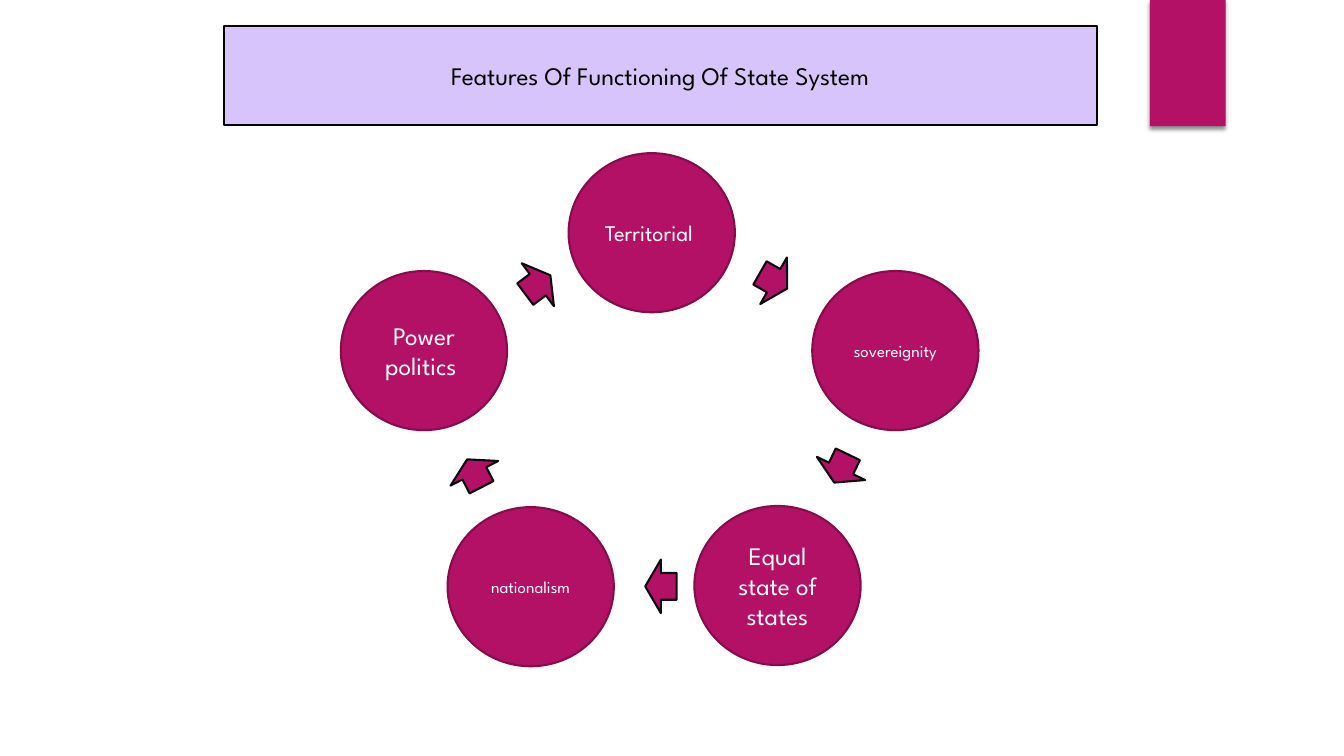
from pptx import Presentation
from pptx.dml.color import RGBColor
from pptx.enum.shapes import MSO_SHAPE as Shape
from pptx.enum.text import MSO_ANCHOR as Anchor, MSO_AUTO_SIZE as AutoSize, PP_ALIGN as Align
from pptx.oxml import parse_xml
from pptx.oxml.ns import nsdecls
from pptx.util import Cm, Pt

MAGENTA = RGBColor(0xB3, 0x11, 0x66)
DARK_MAGENTA = RGBColor(0x84, 0x0D, 0x4B)
LILAC = RGBColor(0xD7, 0xC4, 0xFA)
BLACK = RGBColor(0, 0, 0)
NEAR_BLACK = RGBColor(0x0D, 0x0D, 0x0D)
WHITE = RGBColor(0xFF, 0xFF, 0xFF)

CIRCLE_SIZE = (4.19, 4.01)
ARROW_SIZE = (0.79, 1.35)

# Clockwise from the top: wording, font size, left, top
FEATURES = [
    ("Territorial ", 16, 14.33, 3.86),
    ("sovereignity", 12, 20.47, 6.83),
    ("Equal state of states", 18, 17.5, 12.75),
    ("nationalism", 12, 11.28, 12.78),
    ("Power politics ", 18, 8.59, 6.83),
]
# Arrow following each feature: left, top, rotation
ARROWS = [
    (19.1, 6.4, 29.8),
    (20.8, 11.13, 115.6),
    (16.26, 14.1, 180),
    (11.56, 11.25, 242.7),
    (13.16, 6.5, 323.1),
]


class CycleSlide:
    """Holds the slide and the style shared by its elements."""

    font = "League Spartan"
    line_width = Pt(1.5)

    def __init__(self, deck):
        self.slide = deck.slides.add_slide(deck.slide_layouts[5])

    def paint(self, shape, fill, line=None):
        shape.fill.solid()
        shape.fill.fore_color.rgb = fill
        if line is None:
            shape.line.fill.background()
        else:
            shape.line.color.rgb = line
            shape.line.width = self.line_width

    def label(self, shape, text, size, color):
        frame = shape.text_frame
        frame.word_wrap = True
        frame.auto_size = AutoSize.NONE
        frame.vertical_anchor = Anchor.MIDDLE
        paragraph = frame.paragraphs[0]
        paragraph.alignment = Align.CENTER
        run = paragraph.add_run()
        run.text = text
        run.font.name = self.font
        run.font.size = Pt(size)
        run.font.color.rgb = color

    def add(self, kind, left, top, width, height, fill, line=None):
        shape = self.slide.shapes.add_shape(kind, Cm(left), Cm(top), Cm(width), Cm(height))
        shape.shadow.inherit = False
        self.paint(shape, fill, line)
        return shape

    def title(self, text, left, top, width, height):
        title = self.slide.shapes.title
        title.left, title.top = Cm(left), Cm(top)
        title.width, title.height = Cm(width), Cm(height)
        self.paint(title, LILAC, BLACK)
        self.label(title, text, 18, BLACK)

    def ribbon(self, left, top, width, height):
        ribbon = self.add(Shape.RECTANGLE, left, top, width, height, MAGENTA)
        effects = ribbon._element.spPr.find("{*}effectLst")
        effects.append(parse_xml(
            f'<a:outerShdw {nsdecls("a")} blurRad="{Pt(3)}" dist="{Pt(2)}" dir="5400000" '
            'rotWithShape="0"><a:srgbClr val="000000"><a:alpha val="45000"/></a:srgbClr>'
            '</a:outerShdw>'))

    def feature(self, text, size, left, top):
        circle = self.add(Shape.OVAL, left, top, *CIRCLE_SIZE, MAGENTA, DARK_MAGENTA)
        self.label(circle, text, size, WHITE)

    def arrow(self, left, top, rotation):
        arrow = self.add(Shape.RIGHT_ARROW, left, top, *ARROW_SIZE, MAGENTA, NEAR_BLACK)
        arrow.rotation = rotation


def main():
    deck = Presentation()
    deck.slide_width, deck.slide_height = Cm(33.87), Cm(19.05)
    page = CycleSlide(deck)

    # Heading and corner ribbon
    page.ribbon(28.98, 0, 1.91, 3.18)
    page.title("Features Of Functioning Of State System", 5.64, 0.66, 22, 2.49)

    # Cycle of features
    for feature in FEATURES:
        page.feature(*feature)
    for arrow in ARROWS:
        page.arrow(*arrow)

    deck.save("out.pptx")


if __name__ == "__main__":
    main()
